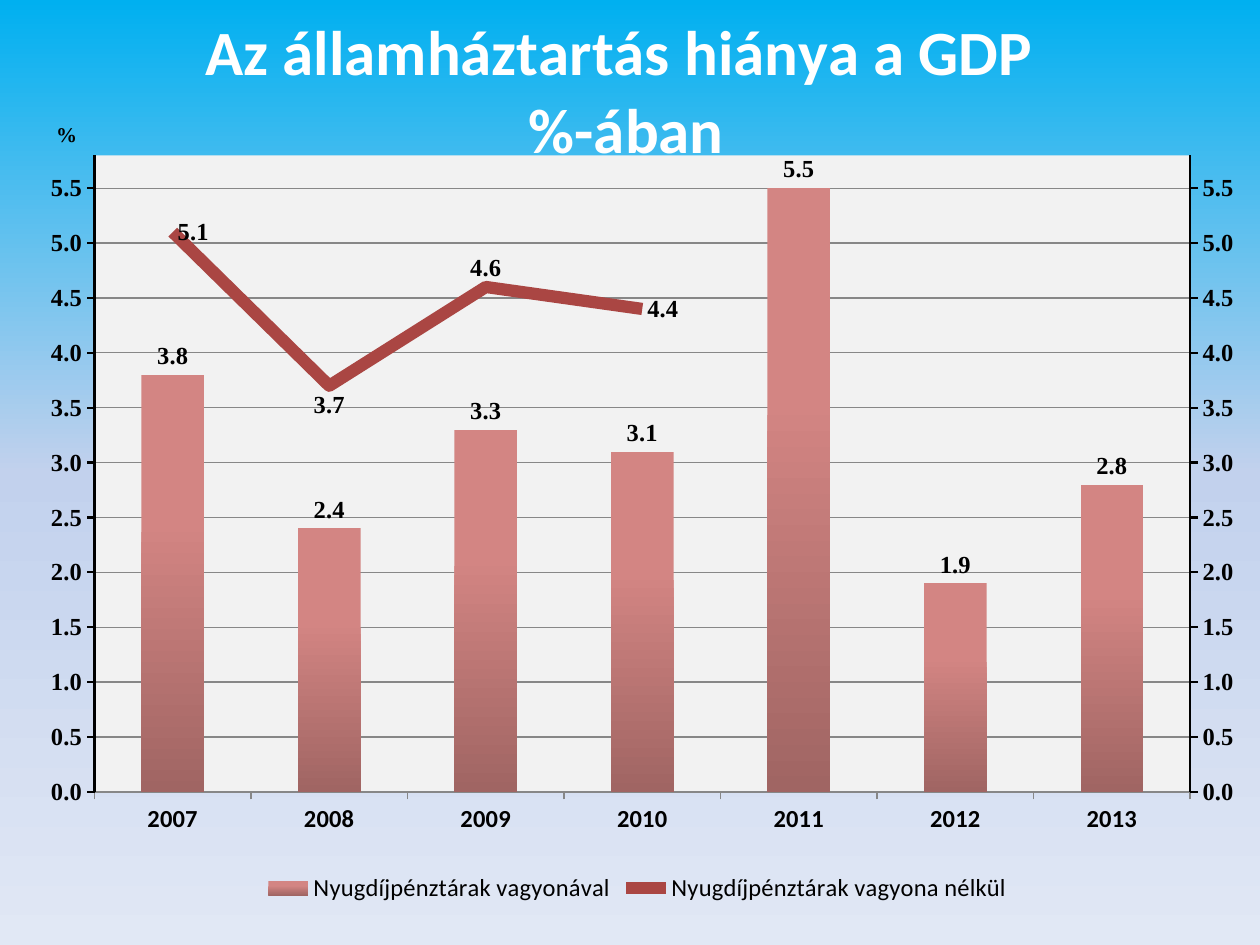
from copy import deepcopy

from pptx import Presentation
from pptx.chart.data import CategoryChartData
from pptx.dml.color import RGBColor
from pptx.enum.chart import (XL_CHART_TYPE, XL_LABEL_POSITION, XL_LEGEND_POSITION,
                             XL_MARKER_STYLE, XL_TICK_MARK)
from pptx.oxml import parse_xml
from pptx.oxml.ns import nsdecls, qn
from pptx.util import Cm, Pt

COLORS = {
    "sky": "00B0F0", "haze": "C2D1ED", "pale": "E1E8F5",
    "bar_top": "D38583", "bar_bottom": "A06563", "line": "AA4643",
    "plot": "F2F2F2", "grid": "878787", "text": "000000", "title": "FFFFFF",
}
SANS, SERIF = "Calibri", "Times New Roman"
YEARS = [str(year) for year in range(2007, 2014)]
WITH_FUNDS = [3.8, 2.4, 3.3, 3.1, 5.5, 1.9, 2.8]
WITHOUT_FUNDS = [5.1, 3.7, 4.6, 4.4, None, None, None]


def color(name):
    return RGBColor.from_string(COLORS[name])


def style_font(font, size, name=SERIF, bold=True, shade="text"):
    font.size, font.name, font.bold = Pt(size), name, bold
    font.color.rgb = color(shade)


def style_line(line, shade, width):
    line.color.rgb = color(shade)
    line.width = Pt(width)


def paint_stops(fill, stops):
    for stop, (position, shade) in zip(fill.gradient_stops, stops):
        stop.position = position
        stop.color.rgb = color(shade)


def paint_background(page):
    fill = page.background.fill
    fill.gradient()
    fill.gradient_angle = 270
    stop_list = next(page.element.iter(qn("a:gsLst")))
    stop_list.append(deepcopy(stop_list[-1]))
    paint_stops(fill, [(0, "sky"), (0.5, "haze"), (1, "pale")])


def place(element, x, y, width=None, height=None):
    """Give a chart part a fixed place, as fractions of the chart."""
    for old in element.findall(qn("c:layout")):
        element.remove(old)
    target = '<c:layoutTarget val="inner"/>' if width else ""
    size = f'<c:w val="{width}"/><c:h val="{height}"/>' if width else ""
    layout = parse_xml(
        f'<c:layout {nsdecls("c")}><c:manualLayout>{target}'
        '<c:xMode val="edge"/><c:yMode val="edge"/>'
        f'<c:x val="{x}"/><c:y val="{y}"/>{size}</c:manualLayout></c:layout>')
    text = element.find(qn("c:tx"))
    element.insert(0 if text is None else 1, layout)


def add_title(title, text, x, y, size, name, shade):
    frame = title.text_frame
    frame.text = text
    for para in frame.paragraphs:
        for span in para.runs:
            style_font(span.font, size, name, shade=shade)
    body = frame._txBody.find(qn("a:bodyPr"))
    body.set("rot", "0")
    body.set("vert", "horz")
    place(title._element.find(qn("c:title")) if title._element.tag != qn("c:title")
          else title._element, x, y)


def style_axes(chart):
    years = chart.category_axis
    years.major_tick_mark = XL_TICK_MARK.OUTSIDE
    style_font(years.tick_labels.font, 14, SANS)
    style_line(years.format.line, "grid", 0.75)

    percent = chart.value_axis
    percent.minimum_scale, percent.maximum_scale, percent.major_unit = 0, 5.8, 0.5
    percent.major_tick_mark = XL_TICK_MARK.OUTSIDE
    percent.tick_labels.number_format = "#,##0.0"
    percent.tick_labels.number_format_is_linked = False
    style_font(percent.tick_labels.font, 14)
    style_line(percent.format.line, "text", 1.25)
    percent.has_major_gridlines = True
    style_line(percent.major_gridlines.format.line, "grid", 0.75)


def split_off_line(chart):
    """Move the second series to a line plot on a right-hand axis."""
    plot_area = chart._chartSpace.chart.plotArea
    bars = plot_area.find(qn("c:barChart"))
    series = bars.findall(qn("c:ser"))[1]
    invert = series.find(qn("c:invertIfNegative"))
    if invert is not None:
        series.remove(invert)
    lines = parse_xml(
        f'<c:lineChart {nsdecls("c")}><c:grouping val="standard"/>'
        '<c:varyColors val="0"/><c:marker val="1"/>'
        '<c:axId val="5001"/><c:axId val="5002"/></c:lineChart>')
    lines.insert(2, series)
    bars.addnext(lines)

    years, percent = (plot_area.find(qn(tag)) for tag in ("c:catAx", "c:valAx"))
    right, hidden = deepcopy(percent), deepcopy(years)
    right.remove(right.find(qn("c:majorGridlines")))
    changes = [
        (right, {"axId": "5002", "crossAx": "5001", "axPos": "r", "crosses": "max"}),
        (hidden, {"axId": "5001", "crossAx": "5002", "delete": "1"}),
    ]
    for axis, values in changes:
        for tag, value in values.items():
            axis.find(qn(f"c:{tag}")).set("val", value)
    percent.addnext(right)
    right.addnext(hidden)


def show_values(series, position):
    labels = series.data_labels
    labels.show_value = True
    labels.number_format, labels.number_format_is_linked = "0.0", False
    labels.position = position
    style_font(labels.font, 14)


def style_series(chart):
    bar_plot, line_plot = chart.plots
    bar_plot.gap_width = 150
    bar_plot.vary_by_categories = False
    bars, line = bar_plot.series[0], line_plot.series[0]

    fill = bars.format.fill
    fill.gradient()
    fill.gradient_angle = 270
    paint_stops(fill, [(0.35, "bar_top"), (1, "bar_bottom")])
    show_values(bars, XL_LABEL_POSITION.OUTSIDE_END)

    style_line(line.format.line, "line", 7)
    line.marker.style = XL_MARKER_STYLE.NONE
    line.smooth = False
    show_values(line, XL_LABEL_POSITION.RIGHT)
    for index, position in [(1, XL_LABEL_POSITION.BELOW), (2, XL_LABEL_POSITION.ABOVE)]:
        label = line.points[index].data_label
        style_font(label.font, 14)
        label.position = position


def add_deficit_chart(page):
    data = CategoryChartData(number_format="0.0")
    data.categories = YEARS
    data.add_series("Nyugdíjpénztárak vagyonával", WITH_FUNDS)
    data.add_series("Nyugdíjpénztárak vagyona nélkül", WITHOUT_FUNDS)
    chart = page.shapes.add_chart(XL_CHART_TYPE.COLUMN_CLUSTERED, Cm(0.3), Cm(0),
                                  Cm(25.1), Cm(18.31), data).chart
    style_font(chart.font, 18, SANS, bold=False)

    # Axes and series
    style_axes(chart)
    split_off_line(chart)
    style_series(chart)

    # Plot area
    plot_area = chart._chartSpace.chart.plotArea
    place(plot_area, 0.064, 0.171, 0.88, 0.701)
    plot_area.append(parse_xml(
        f'<c:spPr {nsdecls("c", "a")}><a:solidFill><a:srgbClr val="{COLORS["plot"]}"/>'
        '</a:solidFill><a:ln><a:noFill/></a:ln></c:spPr>'))

    # Titles and legend
    add_title(chart.chart_title, "Az államháztartás hiánya a GDP \n%-ában",
              0.15, 0.01, 36, SANS, "title")
    add_title(chart.value_axis.axis_title, "%", 0.03, 0.13, 12, SERIF, "text")
    chart.has_legend = True
    chart.legend.position = XL_LEGEND_POSITION.BOTTOM
    chart.legend.include_in_layout = False
    style_font(chart.legend.font, 14, SANS, bold=False)


def main():
    deck = Presentation()
    deck.slide_width, deck.slide_height = Cm(25.4), Cm(19.05)
    page = deck.slides.add_slide(deck.slide_layouts[6])
    paint_background(page)
    add_deficit_chart(page)
    deck.save("out.pptx")


if __name__ == "__main__":
    main()
